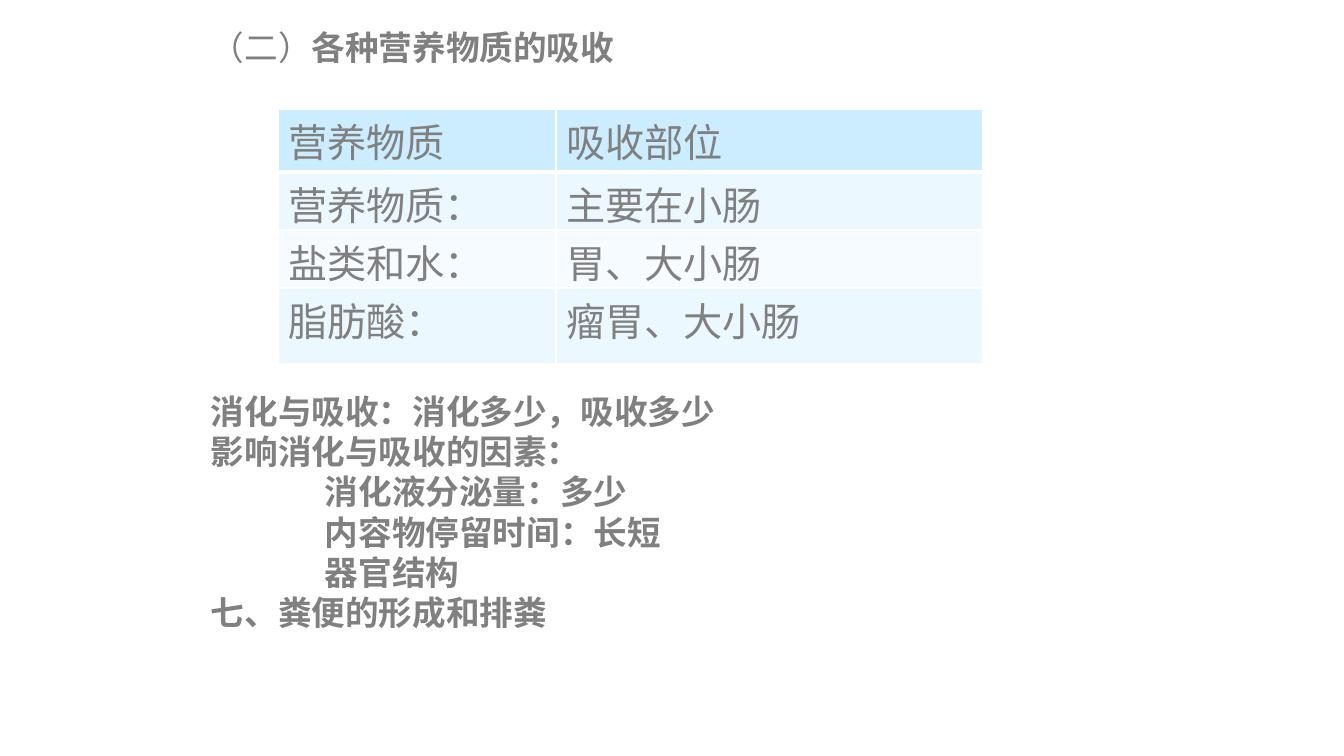
from lxml import etree
from pptx import Presentation
from pptx.dml.color import RGBColor
from pptx.enum import text
from pptx.oxml import ns
from pptx.util import Pt

GRAY = RGBColor(0x80, 0x80, 0x80)
HEAD = RGBColor(0xCC, 0xEC, 0xFF)
BAND = RGBColor(0xEC, 0xF8, 0xFF)
PALE = RGBColor(0xF6, 0xFB, 0xFF)
WHITE = RGBColor(0xFF, 0xFF, 0xFF)
SANS = "Noto Sans CJK SC"
ARIAL = "Arial"


def px(n):
    return round(n * 914400 / 100.8)


def sub(node, tag, **attrs):
    return etree.SubElement(node, ns.qn(tag), **attrs)


class Page:
    def __init__(self, deck):
        self.slide = deck.slides.add_slide(deck.slide_layouts[6])

    def run(self, para, words, size, face, bold=False):
        run = para.add_run()
        run.text = words
        font = run.font
        font.size = Pt(size)
        font.bold = bold
        font.name = face
        font.color.rgb = GRAY
        sub(run._r.get_or_add_rPr(), "a:ea", typeface=face)

    def prose(self, left, top, width, height, lines):
        box = self.slide.shapes.add_textbox(px(left), px(top), px(width), px(height))
        frame = box.text_frame
        frame.word_wrap = True
        frame.auto_size = text.MSO_AUTO_SIZE.NONE
        frame.margin_top = px(8)
        for i, (gap, indent, runs) in enumerate(lines):
            para = frame.add_paragraph() if i else frame.paragraphs[0]
            para.line_spacing = Pt(28.8)
            if gap:
                para.space_before = Pt(gap)
            if indent:
                para._p.get_or_add_pPr().set("marL", str(px(indent)))
            for words, bold in runs:
                self.run(para, words, 24, SANS, bold)

    def edge(self, cell, side, width):
        line = sub(cell._tc.get_or_add_tcPr(), "a:ln" + side, w=str(Pt(width)))
        sub(sub(line, "a:solidFill"), "a:srgbClr", val=str(WHITE))

    def cell(self, cell, words, fill, base):
        for side in "LRT":
            self.edge(cell, side, 1)
        self.edge(cell, "B", base)
        cell.fill.solid()
        cell.fill.fore_color.rgb = fill
        cell.margin_top = px(13)
        cell.margin_bottom = 0
        para = cell.text_frame.paragraphs[0]
        para.line_spacing = Pt(31)
        self.run(para, words, 28, ARIAL)

    def table(self, left, top, cols, rows, data, fills):
        table = self.slide.shapes.add_table(
            len(rows), len(cols), px(left), px(top), px(sum(cols)), px(sum(rows))
        ).table
        for col, width in zip(table.columns, cols):
            col.width = px(width)
        for r, (row, height) in enumerate(zip(table.rows, rows)):
            row.height = px(height)
            for cell, words in zip(row.cells, data[r]):
                self.cell(cell, words, fills[r], 1 if r else 3)


def main():
    deck = Presentation()
    deck.slide_width = px(1344)
    deck.slide_height = px(756)
    page = Page(deck)
    page.prose(201, 19, 967, 621, [
        (0, 0, [("（二）", False), ("各种营养物质的吸收", True)]),
        (231, 0, [("消化与吸收：消化多少，吸收多少", True)]),
        (0, 0, [("影响消化与吸收的因素：", True)]),
        (0, 114, [("消化液分泌量：多少", True)]),
        (0, 114, [("内容物停留时间：长短", True)]),
        (0, 114, [("器官结构", True)]),
        (0, 0, [("七、粪便的形成和排粪", True)]),
    ])
    page.table(278, 109, [278, 427], [63, 58, 58, 76], [
        ("营养物质", "吸收部位"),
        ("营养物质：", "主要在小肠"),
        ("盐类和水：", "胃、大小肠"),
        ("脂肪酸：", "瘤胃、大小肠"),
    ], [HEAD, BAND, PALE, BAND])
    deck.save("out.pptx")


if __name__ == "__main__":
    main()
